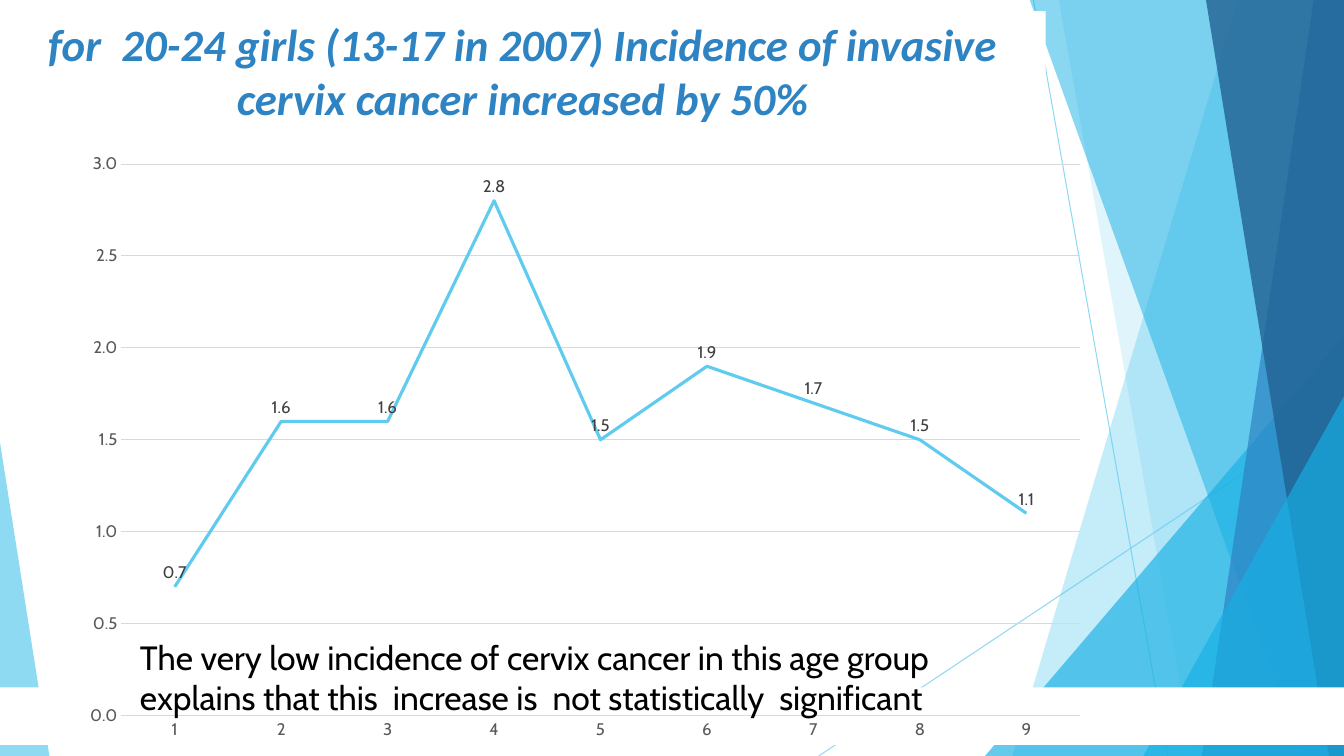
from lxml import etree
from pptx import Presentation
from pptx.chart.data import CategoryChartData
from pptx.dml.color import RGBColor
from pptx.enum.chart import XL_CHART_TYPE as ChartType, XL_LABEL_POSITION as LabelPosition
from pptx.enum.chart import XL_MARKER_STYLE as Marker, XL_TICK_MARK as Tick
from pptx.enum.shapes import MSO_CONNECTOR as Connector, MSO_SHAPE as Shape
from pptx.enum.text import MSO_ANCHOR as Anchor, MSO_AUTO_SIZE as AutoSize, PP_ALIGN as Align
from pptx.oxml import parse_xml
from pptx.oxml.ns import nsdecls, qn
from pptx.util import Inches, Pt

COLORS = {
    "sky": "5FCBEF", "cyan": "17B0E4", "blue": "2E83C3", "navy": "226292",
    "white": "FFFFFF", "black": "000000",
    "grid": "D9D9D9", "axis": "595959", "label": "404040",
}
WIDTH, HEIGHT = 13.33, 7.5


def paint(fill, color, alpha=100):
    """Solid colour for a fill, with opacity in percent."""
    fill.solid()
    fill.fore_color.rgb = RGBColor.from_string(COLORS[color])
    if alpha < 100:
        for node in fill._xPr.iter(qn("a:srgbClr")):
            etree.SubElement(node, qn("a:alpha")).set("val", str(alpha * 1000))


def style_font(font, name, size, color):
    font.name, font.size = name, Pt(size)
    font.color.rgb = RGBColor.from_string(COLORS[color])


deck = Presentation()
deck.slide_width, deck.slide_height = Inches(WIDTH), Inches(HEIGHT)
page = deck.slides.add_slide(deck.slide_layouts[5])
shapes = page.shapes

# Thin crossing lines
for x1, y1, x2, y2 in [(10.25, 0, 11.58, HEIGHT), (WIDTH, 4.03, 8.12, HEIGHT)]:
    ray = shapes.add_connector(Connector.STRAIGHT, Inches(x1), Inches(y1), Inches(x2), Inches(y2))
    ray.line.width = Pt(0.75)
    paint(ray.line.fill, "sky", 70)
    etree.SubElement(ray._element.spPr, qn("a:effectLst"))

# Facets: bands (top left x, bottom left x) reach the right edge,
# triangles (left, top, width, apex) stand on the bottom edge
facets = [
    ("band", (12.28, 10.04), "sky", 36),
    ("band", (10.5, 11.83), "sky", 20),
    ("triangle", (9.77, 3.33, 3.56, 1), "cyan", 66),
    ("band", (10.21, 12.91), "cyan", 50),
    ("band", (13.03, 11.92), "blue", 70),
    ("band", (11.96, 13.18), "navy", 80),
    ("triangle", (11.34, 3.93, 1.99, 1), "cyan", 66),
    ("triangle", (0, 4.39, 0.49, 0), "sky", 70),
]
for kind, place, color, alpha in facets:
    if kind == "band":
        top_x, bottom_x = place
        corners = [(Inches(x), Inches(y)) for x, y in
                   [(top_x, -0.01), (WIDTH, -0.01), (WIDTH, HEIGHT), (bottom_x, HEIGHT)]]
        outline = shapes.build_freeform(*corners[0])
        outline.add_line_segments(corners[1:], close=True)
        facet = outline.convert_to_shape()
    else:
        left, top, width, apex = place
        facet = shapes.add_shape(Shape.ISOSCELES_TRIANGLE, Inches(left), Inches(top),
                                 Inches(width), Inches(HEIGHT - top))
        facet.adjustments[0] = apex
    paint(facet.fill, color, alpha)
    facet.line.fill.background()
    facet.shadow.inherit = False

# Title on white, brought in front of the facets
title = shapes.title
title.element.getparent().append(title.element)
title.left, title.top, title.width, title.height = map(Inches, (0, 0.11, 10.37, 1.18))
paint(title.fill, "white")
frame = title.text_frame
frame.text = "for  20-24 girls (13-17 in 2007) Incidence of invasive cervix cancer increased by 50%"
frame.word_wrap, frame.auto_size = True, AutoSize.NONE
frame.vertical_anchor = Anchor.MIDDLE
para = frame.paragraphs[0]
para.alignment = Align.CENTER
style_font(para.font, "Calibri", 32, "blue")
para.font.bold = para.font.italic = True

# White strip along the bottom
strip = shapes.add_shape(Shape.RECTANGLE, 0, Inches(6.82), Inches(WIDTH), Inches(0.57))
paint(strip.fill, "white")
strip.line.fill.background()
strip.shadow.inherit = False

# Incidence chart
data = CategoryChartData(number_format="###,##0.0")
data.categories = [str(number) for number in range(1, 10)]
data.add_series("Series 1", (0.7, 1.6, 1.6, 2.8, 1.5, 1.9, 1.7, 1.5, 1.1))
chart = shapes.add_chart(ChartType.LINE, Inches(0.44), Inches(1.48),
                         Inches(10.33), Inches(5.91), data).chart
chart.has_legend = chart.has_title = False
style_font(chart.font, "Cabin", 10, "black")

for axis in (chart.category_axis, chart.value_axis):
    axis.major_tick_mark = axis.minor_tick_mark = Tick.NONE
    style_font(axis.tick_labels.font, "Cabin", 12, "axis")
paint(chart.category_axis.format.line.fill, "grid")
chart.category_axis.format.line.width = Pt(0.75)

values = chart.value_axis
values.minimum_scale, values.maximum_scale, values.major_unit = 0, 3, 0.5
values.tick_labels.number_format = "###,##0.0"
values.tick_labels.number_format_is_linked = False
values.format.line.fill.background()
paint(values.major_gridlines.format.line.fill, "grid")
values.major_gridlines.format.line.width = Pt(0.75)

plot = chart.plots[0]
plot.vary_by_categories = False
series = plot.series[0]
series.smooth = False
series.marker.style = Marker.NONE
series.format.line.width = Pt(2.25)
paint(series.format.line.fill, "sky")
labels = series.data_labels
labels.show_value, labels.position = True, LabelPosition.ABOVE
labels.number_format, labels.number_format_is_linked = "###,##0.0", False
style_font(labels.font, "Cabin", 12, "label")

# Fixed inner plot area
area = chart._chartSpace.find(".//" + qn("c:plotArea"))
for old in area.findall(qn("c:layout")):
    area.remove(old)
sizes = "".join(f'<c:{key} val="{value}"/>' for key, value in
                [("x", 0.074), ("y", 0.025), ("w", 0.92), ("h", 0.926)])
area.insert(0, parse_xml(
    f'<c:layout {nsdecls("c")}><c:manualLayout><c:layoutTarget val="inner"/>'
    f'<c:xMode val="edge"/><c:yMode val="edge"/>{sizes}</c:manualLayout></c:layout>'))

# Note over the chart
note = shapes.add_textbox(Inches(1.29), Inches(6.27), Inches(9.24), Inches(0.91))
note.text_frame.word_wrap = True
note.text_frame.text = ("The very low incidence of cervix cancer in this age group "
                        "explains that this  increase is  not statistically  significant")
style_font(note.text_frame.paragraphs[0].font, "Cabin", 24, "black")

deck.save("out.pptx")
